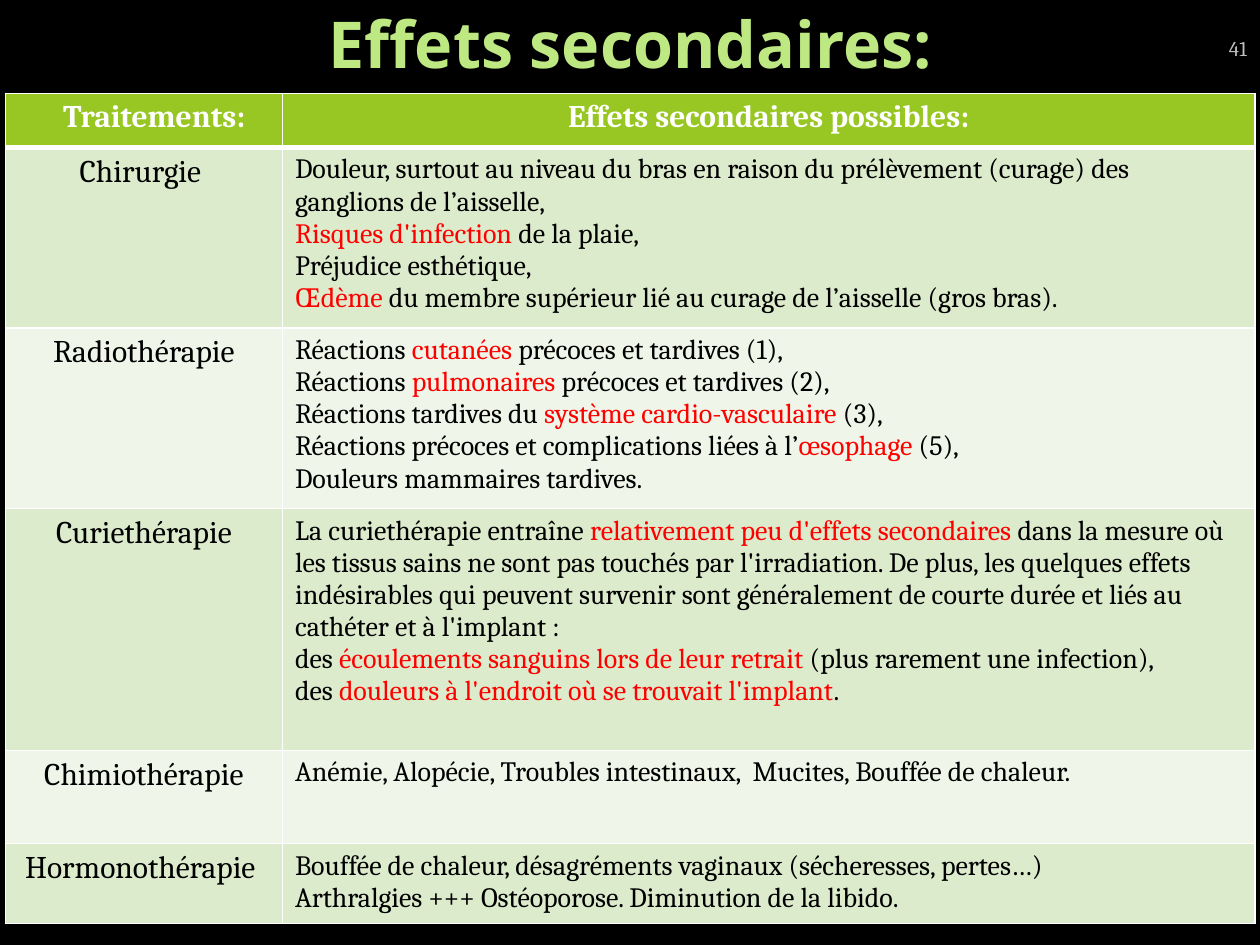
import pptx
import pptx.dml.color
import pptx.enum.text
import pptx.oxml
import pptx.oxml.ns
import pptx.util

Pt = pptx.util.Pt
ALIGN = pptx.enum.text.PP_ALIGN
ANCHOR = pptx.enum.text.MSO_ANCHOR

COLORS = {
    "background": "000000",
    "title": "BEE882",
    "number": "BDBDBD",
    "header": "98C723",
    "band_dark": "DDEBCD",
    "band_light": "EFF5E8",
    "border": "FFFFFF",
    "white": "FFFFFF",
    "text": "000000",
    "accent": "FF0000",
}

HEADER = ("Traitements:", "Effets secondaires possibles:")
TREATMENTS = [
    ("Chirurgie ", 102.24, [
        "Douleur, surtout au niveau du bras en raison du prélèvement (curage) des ganglions de l’aisselle,",
        "*Risques d'infection *de la plaie,",
        "Préjudice esthétique,",
        "*Œdème* du membre supérieur lié au curage de l’aisselle (gros bras).",
    ]),
    ("Radiothérapie", 103, [
        "Réactions *cutanées* précoces et tardives (1),",
        "Réactions *pulmonaires* précoces et tardives (2),",
        "Réactions tardives du *système cardio-vasculaire *(3),",
        "Réactions précoces et complications liées à l’*œsophage *(5),",
        "Douleurs mammaires tardives.",
    ]),
    ("Curiethérapie", 138.24, [
        "La curiethérapie entraîne *relativement peu d'effets secondaires *dans la mesure où "
        "les tissus sains ne sont pas touchés par l'irradiation. De plus, les quelques effets "
        "indésirables qui peuvent survenir sont généralement de courte durée et liés au "
        "cathéter et à l'implant :",
        "des *écoulements sanguins lors de leur retrait *(plus rarement une infection),",
        "des *douleurs à l'endroit où se trouvait l'implant*.",
    ]),
    ("Chimiothérapie", 53.28, [
        "Anémie, Alopécie, Troubles intestinaux,  Mucites, Bouffée de chaleur.",
    ]),
    ("Hormonothérapie ", 44.64, [
        "Bouffée de chaleur, désagréments vaginaux (sécheresses, pertes…)",
        "Arthralgies +++ Ostéoporose. Diminution de la libido.",
    ]),
]


class SlideBuilder:
    """Holds the style and the current slide, and draws its elements."""

    body_font = "Cambria"
    title_font = "Open Sans"

    def __init__(self, slide):
        self.slide = slide

    def rgb(self, name):
        return pptx.dml.color.RGBColor.from_string(COLORS[name])

    def background(self, color):
        fill = self.slide.background.fill
        fill.solid()
        fill.fore_color.rgb = self.rgb(color)

    def add_lines(self, frame, lines, size, color, align=ALIGN.LEFT, bold=False, font=None):
        for index, line in enumerate(lines):
            paragraph = frame.paragraphs[0] if index == 0 else frame.add_paragraph()
            paragraph.alignment = align
            for part, words in enumerate(line.split("*")):
                if words:
                    run = paragraph.add_run()
                    run.text = words
                    run.font.name = font or self.body_font
                    run.font.size = Pt(size)
                    run.font.bold = bold
                    run.font.color.rgb = self.rgb("accent" if part % 2 else color)

    def label(self, box, words, anchor, side_margin, **style):
        frame = self.slide.shapes.add_textbox(*map(Pt, box)).text_frame
        frame.word_wrap = True
        frame.vertical_anchor = anchor
        frame.margin_left = frame.margin_right = Pt(side_margin)
        self.add_lines(frame, [words], **style)

    def cell(self, cell, lines, fill, top=1, bottom=1, **style):
        properties = cell._tc.get_or_add_tcPr()
        for side, width in (("L", 1), ("R", 1), ("T", top), ("B", bottom)):
            properties.append(pptx.oxml.parse_xml(
                f'<a:ln{side} {pptx.oxml.ns.nsdecls("a")} w="{Pt(width)}"><a:solidFill>'
                f'<a:srgbClr val="{COLORS["border"]}"/></a:solidFill></a:ln{side}>'))
        cell.fill.solid()
        cell.fill.fore_color.rgb = self.rgb(fill)
        self.add_lines(cell.text_frame, lines, **style)

    def table(self, left, top, widths, header_height, header, rows):
        heights = [header_height] + [height for _, height, _ in rows]
        table = self.slide.shapes.add_table(
            len(heights), len(widths), Pt(left), Pt(top),
            Pt(sum(widths)), Pt(sum(heights))).table
        table.horz_banding = False
        for column, width in zip(table.columns, widths):
            column.width = Pt(width)
        for row, height in zip(table.rows, heights):
            row.height = Pt(height)
        for column, words in enumerate(header):
            self.cell(table.cell(0, column), [words], "header", bottom=3,
                      size=18, color="white", align=ALIGN.CENTER, bold=True)
        table.cell(0, 0).margin_left = Pt(19)
        for index, (treatment, _, effects) in enumerate(rows, 1):
            band = "band_dark" if index % 2 else "band_light"
            rule = 3 if index == 1 else 1
            self.cell(table.cell(index, 0), [treatment], band, top=rule,
                      size=18, color="text", align=ALIGN.CENTER)
            self.cell(table.cell(index, 1), effects, band, top=rule,
                      size=16, color="text")


def main():
    deck = pptx.Presentation()
    deck.slide_width, deck.slide_height = Pt(720), Pt(540)
    builder = SlideBuilder(deck.slides.add_slide(deck.slide_layouts[6]))
    builder.background("background")
    builder.label((36.5, 0, 648, 49), "Effets secondaires:", ANCHOR.MIDDLE, 7.2,
                  size=36.9, color="title", align=ALIGN.CENTER, bold=True,
                  font=builder.title_font)
    builder.table(3, 53.28, (158.4, 555.84), 31, HEADER, TREATMENTS)
    builder.label((652.5, 9.5, 60, 28.8), "41", ANCHOR.BOTTOM, 0,
                  size=12, color="number", align=ALIGN.RIGHT)
    deck.save("out.pptx")


if __name__ == "__main__":
    main()
